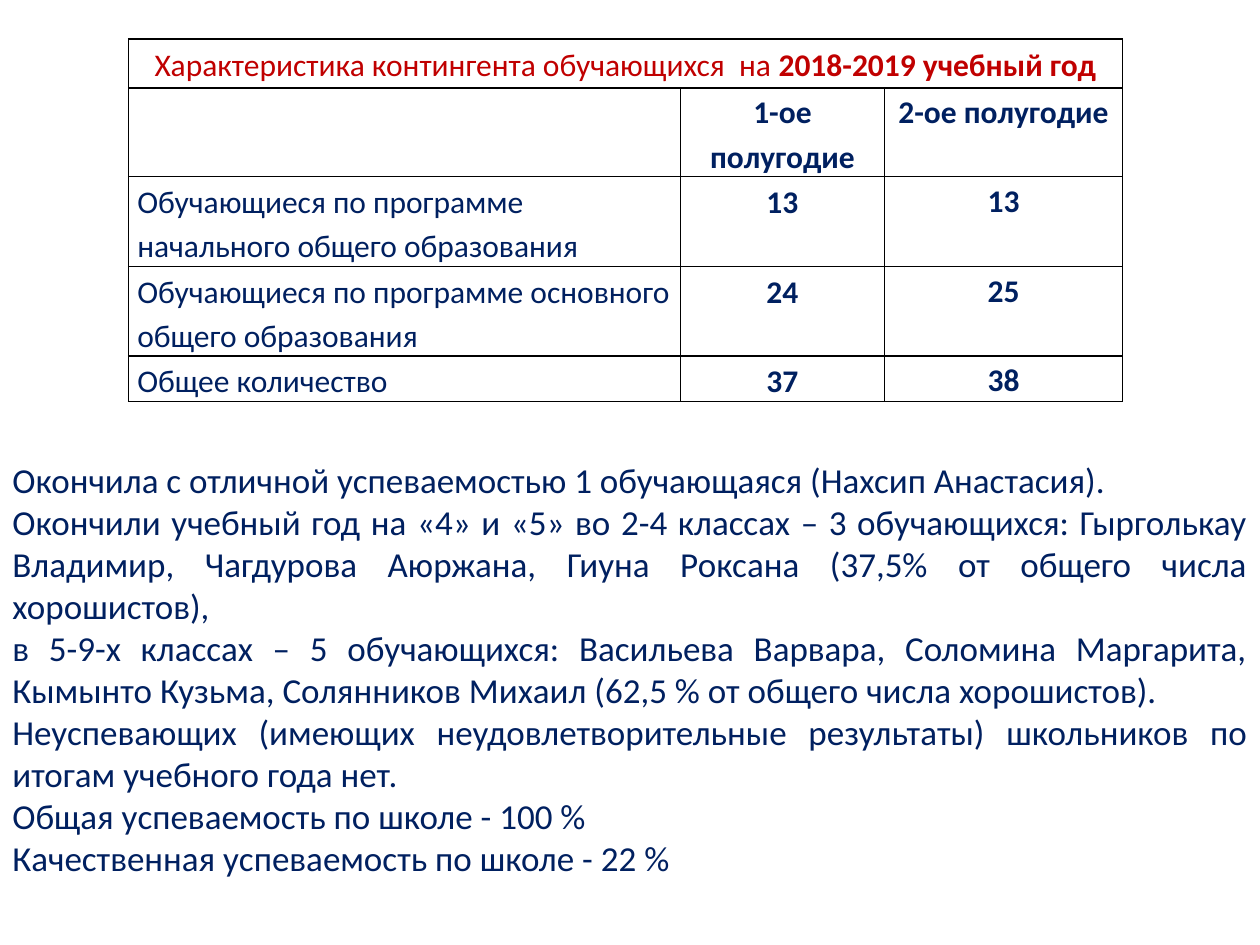
from dataclasses import dataclass

from lxml import etree
from pptx import Presentation
from pptx.dml.color import RGBColor
from pptx.enum.text import MSO_ANCHOR, PP_ALIGN
from pptx.oxml.ns import qn
from pptx.util import Inches, Pt

LEFT, CENTER, JUSTIFY = PP_ALIGN.LEFT, PP_ALIGN.CENTER, PP_ALIGN.JUSTIFY
TOP = MSO_ANCHOR.TOP


@dataclass(frozen=True)
class Theme:
    font: str = "Calibri"
    title: str = "C00000"
    text: str = "002060"
    border: str = "000000"
    table_size: int = 18
    body_size: int = 20


THEME = Theme()

COLUMNS = [4.38, 1.62, 1.89]
ROWS = [0.39, 0.7, 0.71, 0.71, 0.36]
TITLE = [("Характеристика контингента обучающихся  на ", False),
         ("2018-2019 учебный год", True)]
TABLE = [
    ["", "1-ое полугодие", "2-ое полугодие"],
    ["Обучающиеся по программе начального общего образования", "13", "13"],
    ["Обучающиеся по программе основного общего образования", "24", "25"],
    ["Общее количество", "37", "38"],
]
SUMMARY = [
    ("Окончила с отличной успеваемостью 1 обучающаяся (Нахсип Анастасия).", LEFT),
    ("Окончили учебный год на «4» и «5» во 2-4 классах – 3 обучающихся: "
     "Гырголькау Владимир, Чагдурова Аюржана, Гиуна Роксана "
     "(37,5% от общего числа хорошистов),", JUSTIFY),
    ("в 5-9-х классах – 5 обучающихся: Васильева Варвара, Соломина Маргарита, "
     "Кымынто Кузьма, Солянников Михаил (62,5 % от общего числа хорошистов).", JUSTIFY),
    ("Неуспевающих (имеющих неудовлетворительные результаты) школьников "
     "по итогам учебного года нет.", JUSTIFY),
    ("Общая успеваемость по школе - 100 %", LEFT),
    ("Качественная успеваемость по школе - 22 %", LEFT),
]


def write(p, runs, size, color=THEME.text, align=LEFT, line=None, after=None):
    """Fill a paragraph with (text, bold) runs."""
    p.alignment = align
    p.line_spacing = line
    p.space_after = after
    p.font.size = Pt(size)
    for text, bold in runs:
        r = p.add_run()
        r.text = text
        r.font.name = THEME.font
        r.font.size = Pt(size)
        r.font.bold = bold
        r.font.color.rgb = RGBColor.from_string(color)


def add_borders(cell):
    tc_pr = cell._tc.get_or_add_tcPr()
    for i, side in enumerate(("a:lnL", "a:lnR", "a:lnT", "a:lnB")):
        ln = etree.Element(qn(side), w=str(Pt(1)))
        fill = etree.SubElement(ln, qn("a:solidFill"))
        etree.SubElement(fill, qn("a:srgbClr"), val=THEME.border)
        tc_pr.insert(i, ln)


def format_cell(cell, padded):
    cell.fill.background()
    add_borders(cell)
    cell.vertical_anchor = TOP
    side = Inches(0.07 if padded else 0)
    cell.margin_left = cell.margin_right = side
    cell.margin_top = Inches(0.01 if padded else 0)
    cell.margin_bottom = 0


def add_student_table(slide, left, top, width, height):
    table = slide.shapes.add_table(len(ROWS), len(COLUMNS), left, top, width, height).table
    table.first_row = table.horz_banding = False
    for column, size in zip(table.columns, COLUMNS):
        column.width = Inches(size)
    for row, size in zip(table.rows, ROWS):
        row.height = Inches(size)

    for i in range(len(ROWS)):
        for j in range(len(COLUMNS)):
            format_cell(table.cell(i, j), padded=i == 0 or (i > 1 and j < 2))

    table.cell(0, 0).merge(table.cell(0, len(COLUMNS) - 1))
    spacing = {"line": 1.15, "after": Pt(10)}
    write(table.cell(0, 0).text_frame.paragraphs[0], TITLE, THEME.table_size,
          color=THEME.title, align=CENTER, **spacing)
    for i, values in enumerate(TABLE, start=1):
        for j, text in enumerate(values):
            runs = [(text, j > 0)] if text else []
            write(table.cell(i, j).text_frame.paragraphs[0], runs, THEME.table_size,
                  align=CENTER if j else LEFT, **spacing)


def add_summary(slide, left, top, width, height):
    tf = slide.shapes.add_textbox(left, top, width, height).text_frame
    tf.word_wrap = True
    for i, (text, align) in enumerate(SUMMARY):
        p = tf.add_paragraph() if i else tf.paragraphs[0]
        write(p, [(text, False)], THEME.body_size, align=align)


def main():
    prs = Presentation()
    prs.slide_width, prs.slide_height = Inches(10), Inches(7.5)
    slide = prs.slides.add_slide(prs.slide_layouts[6])
    add_student_table(slide, Inches(1.02), Inches(0.31),
                      Inches(sum(COLUMNS)), Inches(sum(ROWS)))
    add_summary(slide, Inches(0), Inches(3.59), Inches(10), Inches(3.47))
    prs.save("out.pptx")


if __name__ == "__main__":
    main()
